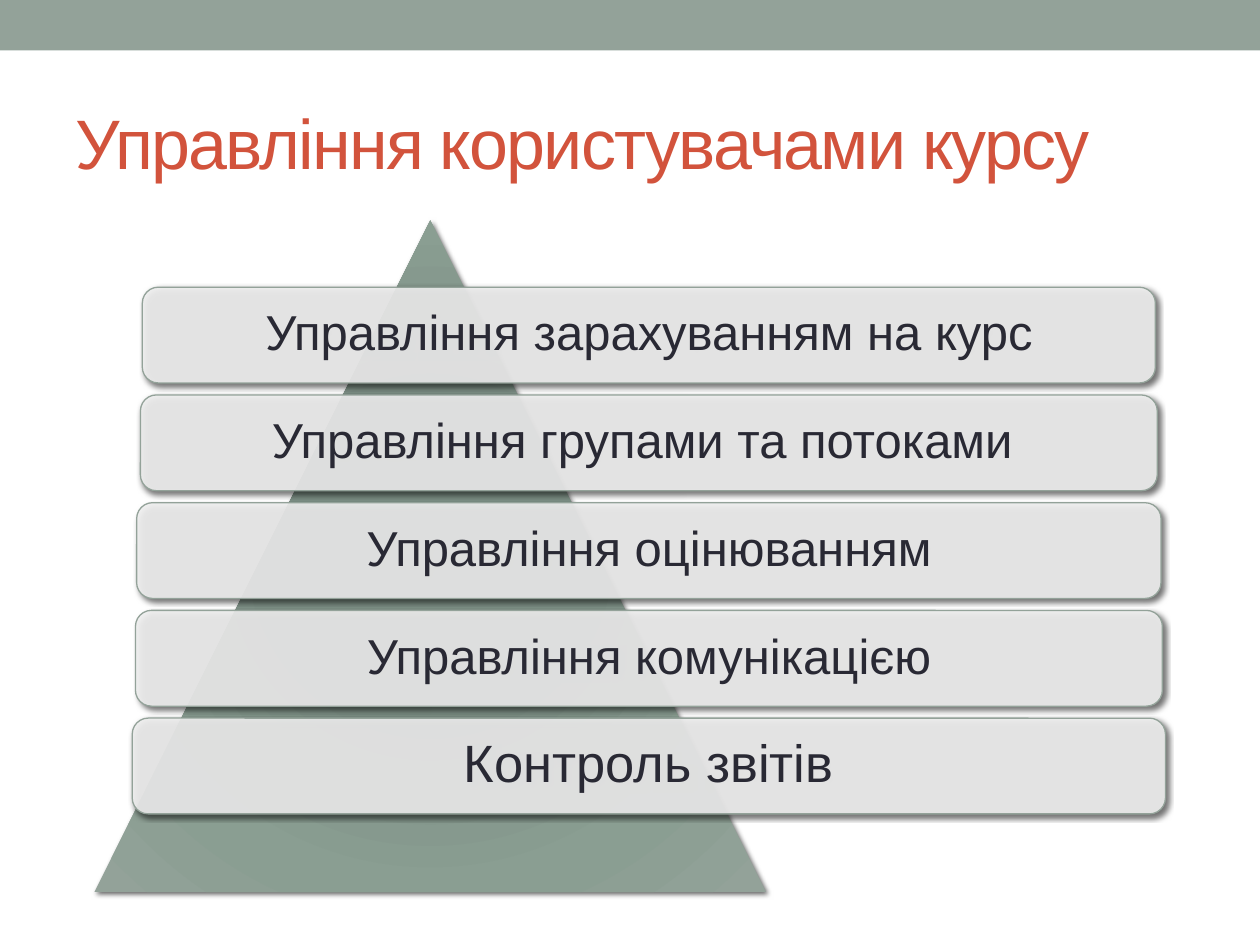
from lxml import etree
from pptx import Presentation
from pptx.dml.color import RGBColor
from pptx.enum.shapes import MSO_SHAPE as Shape
from pptx.enum.text import MSO_ANCHOR as Anchor, PP_ALIGN as Align
from pptx.oxml import parse_xml
from pptx.oxml.ns import nsdecls, qn
from pptx.util import Inches, Pt

COLORS = {
    "sage": "93A299",
    "title": "D2533C",
    "text": "292934",
    "bar": "F0F0F0",
    "shadow": "000000",
}
PYRAMID_STOPS = [(0, "7B8E82"), (34, "7B8D83"), (70, "8A9E92"), (100, "93A299")]
FONT = "Arial"

# Label, width of its bar in inches, text size in points
TOPICS = [
    ("Управління зарахуванням на курс", 8.04, 28),
    ("Управління групами та потоками ", 8.07, 28),
    ("Управління оцінюванням", 8.13, 28),
    ("Управління комунікацією", 8.15, 28),
    ("Контроль звітів", 8.2, 30),
]
BAR_CENTER, BAR_TOP, BAR_HEIGHT, BAR_PITCH = 5.15, 2.28, 0.76, 0.855


def color(name):
    return RGBColor.from_string(COLORS[name])


def add_preset(slide, preset, left, top, width, height, fill):
    shape = slide.shapes.add_shape(
        preset, Inches(left), Inches(top), Inches(width), Inches(height))
    shape.shadow.inherit = False
    shape.fill.solid()
    shape.fill.fore_color.rgb = color(fill)
    shape.line.fill.background()
    return shape


def style_font(paragraph, size, name):
    paragraph.font.name = FONT
    paragraph.font.size = Pt(size)
    paragraph.font.color.rgb = color(name)


def cast_shadow(shape):
    effects = shape._element.spPr.find(qn("a:effectLst"))
    effects.append(parse_xml(
        f'<a:outerShdw {nsdecls("a")} blurRad="{Pt(3)}" dist="{Pt(2)}" '
        f'dir="2700000" rotWithShape="0"><a:srgbClr val="{COLORS["shadow"]}">'
        '<a:alpha val="60000"/></a:srgbClr></a:outerShdw>'))


def set_radial_fill(shape, stops):
    marks = "".join(
        f'<a:gs pos="{position * 1000}"><a:srgbClr val="{shade}"/></a:gs>'
        for position, shade in stops)
    gradient = parse_xml(
        f'<a:gradFill {nsdecls("a")} rotWithShape="1"><a:gsLst>{marks}</a:gsLst>'
        '<a:path path="circle"><a:fillToRect l="100000" t="100000" '
        'r="100000" b="100000"/></a:path></a:gradFill>')
    properties = shape._element.spPr
    properties.replace(properties.find(qn("a:solidFill")), gradient)


def set_opacity(shape, percent):
    fill_color = shape._element.spPr.find(qn("a:solidFill"))[0]
    etree.SubElement(fill_color, qn("a:alpha"), val=str(percent * 1000))


def add_title(slide, text):
    title = slide.shapes.title
    title.left, title.top = Inches(0.5), Inches(0.58)
    title.width, title.height = Inches(9), Inches(1.08)
    frame = title.text_frame
    frame.text = text
    frame.vertical_anchor = Anchor.MIDDLE
    heading = frame.paragraphs[0]
    heading.alignment = Align.LEFT
    style_font(heading, 40, "title")
    heading.runs[0].font._element.set("spc", "-100")


def add_pyramid(slide):
    pyramid = add_preset(
        slide, Shape.ISOSCELES_TRIANGLE, 0.75, 1.75, 5.33, 5.33, "sage")
    set_radial_fill(pyramid, PYRAMID_STOPS)
    cast_shadow(pyramid)


def add_topic_bar(slide, row, label, width, size):
    bar = add_preset(
        slide, Shape.ROUNDED_RECTANGLE, BAR_CENTER - width / 2,
        BAR_TOP + row * BAR_PITCH, width, BAR_HEIGHT, "bar")
    set_opacity(bar, 90)
    bar.line.color.rgb = color("sage")
    bar.line.width = Pt(0.75)
    cast_shadow(bar)

    frame = bar.text_frame
    frame.text = label
    frame.word_wrap = True
    frame.vertical_anchor = Anchor.MIDDLE
    frame.margin_left = frame.margin_right = Inches(0.12)
    frame.margin_top = frame.margin_bottom = Inches(0.12)
    topic = frame.paragraphs[0]
    topic.alignment = Align.CENTER
    topic.line_spacing = 0.9
    style_font(topic, size, "text")


def main():
    deck = Presentation()
    deck.slide_width, deck.slide_height = Inches(10), Inches(7.5)
    slide = deck.slides.add_slide(deck.slide_layouts.get_by_name("Title Only"))

    add_preset(slide, Shape.RECTANGLE, 0, 0, 10, 0.4, "sage")
    add_title(slide, "Управління користувачами курсу")
    add_pyramid(slide)
    for row, (label, width, size) in enumerate(TOPICS):
        add_topic_bar(slide, row, label, width, size)

    deck.save("out.pptx")


if __name__ == "__main__":
    main()
